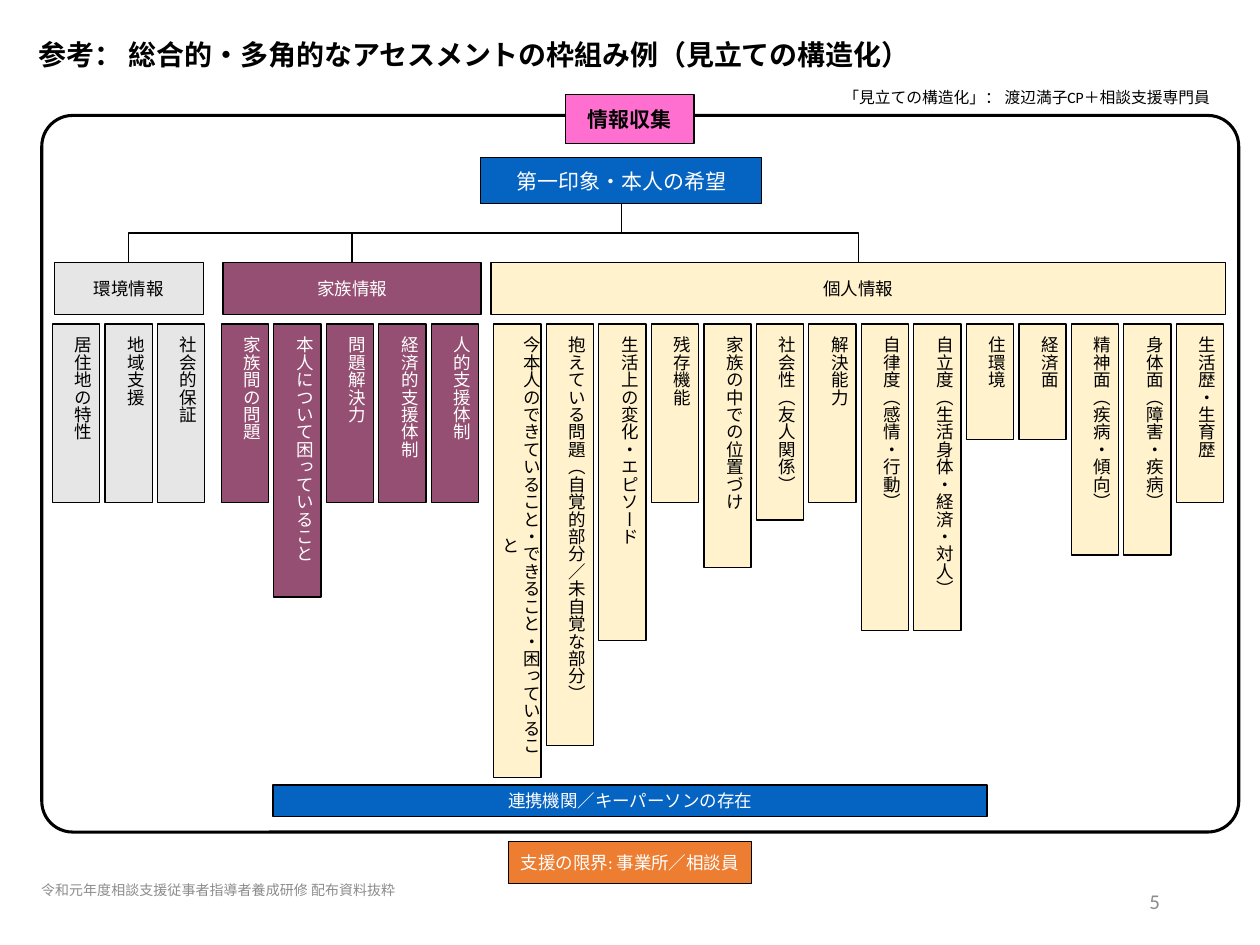
from lxml import etree
from pptx import Presentation
from pptx.dml.color import RGBColor
from pptx.enum import shapes, text
from pptx.oxml import ns
from pptx.util import Pt

BLACK, WHITE, GRAY = "000000", "FFFFFF", "8C8C8C"
BLUE, PLUM, CREAM, SILVER = "0563C1", "954F72", "FFF2CC", "E6E6E6"
CJK = "Noto Sans CJK JP"
ALIGN, ANCHOR = text.PP_ALIGN, text.MSO_ANCHOR


def write(sp, words, size, color, bold=False, align=ALIGN.CENTER,
          anchor=ANCHOR.MIDDLE, wrap=True, font="Calibri"):
    """Put one formatted paragraph into a shape."""
    tf = sp.text_frame
    tf.word_wrap = wrap
    tf.vertical_anchor = anchor
    p = tf.paragraphs[0]
    p.text = words
    p.alignment = align
    p.font.size = Pt(size)
    p.font.bold = bold
    p.font.color.rgb = RGBColor.from_string(color)
    p.font.name = font
    latin = p._p.find(".//" + ns.qn("a:latin"))
    ea = etree.Element(ns.qn("a:ea"), typeface=CJK)
    latin.addnext(ea)


def add_box(x, y, w, h, fill):
    sp = s.shapes.add_shape(shapes.MSO_SHAPE.RECTANGLE, Pt(x), Pt(y), Pt(w), Pt(h))
    sp.shadow.inherit = False
    sp.fill.solid()
    sp.fill.fore_color.rgb = RGBColor.from_string(fill)
    sp.line.color.rgb = RGBColor.from_string(BLACK)
    sp.line.width = Pt(0.75)
    return sp


prs = Presentation()
prs.slide_width, prs.slide_height = Pt(720), Pt(540)
s = prs.slides.add_slide(prs.slide_layouts[5])

# Title
title = s.shapes.title
title.left, title.top, title.width, title.height = Pt(15), Pt(14.4), Pt(660), Pt(36)
write(title, "参考： 総合的・多角的なアセスメントの枠組み例（見立ての構造化）",
      16, BLACK, bold=True, align=ALIGN.LEFT, font=CJK)
title.text_frame.paragraphs[0].line_spacing = 0.9

# Outer frame
frame = s.shapes.add_shape(shapes.MSO_SHAPE.ROUNDED_RECTANGLE,
                           Pt(23.9), Pt(66), Pt(684), Pt(409.5))
frame.adjustments[0] = 0.043
frame.shadow.inherit = False
frame.fill.background()
frame.line.color.rgb = RGBColor.from_string(BLACK)
frame.line.width = Pt(1.75)

# Text boxes: x, y, w, h, words, size, colour, align, anchor, font
for x, y, w, h, words, size, color, align, anchor, font in [
    (508, 500.4, 162, 28.8, "5", 12, GRAY, ALIGN.RIGHT, ANCHOR.MIDDLE, "Calibri"),
    (339, 46.8, 359.4, 18, "「見立ての構造化」： 渡辺満子CP＋相談支援専門員",
     9, BLACK, ALIGN.RIGHT, ANCHOR.TOP, "Calibri"),
    (12.2, 500.4, 225.4, 15.8, "令和元年度相談支援従事者指導者養成研修 配布資料抜粋",
     8, GRAY, ALIGN.CENTER, ANCHOR.MIDDLE, CJK),
]:
    tb = s.shapes.add_textbox(Pt(x), Pt(y), Pt(w), Pt(h))
    write(tb, words, size, color, align=align, anchor=anchor, font=font)

# Horizontal boxes outside the three groups
for x, y, w, h, words, size, fill, color, bold in [
    (323.1, 54, 73.6, 28, "情報収集", 12, "FF6FCF", BLACK, True),
    (290.4, 481, 139, 24, "支援の限界: 事業所／相談員", 10, "ED7D31", WHITE, False),
    (156, 448.6, 408, 18, "連携機関／キーパーソンの存在", 10, BLUE, WHITE, False),
]:
    write(add_box(x, y, w, h, fill), words, size, color, bold, wrap=False)

root = add_box(274.7, 90, 160.6, 26.4, BLUE)
write(root, "第一印象・本人の希望", 12, WHITE, wrap=False)

# Groups: heading, heading x and width, colours, first column x, (item, height)
groups = [
    ("環境情報", 31, 85.2, SILVER, BLACK, 30,
     [("居住地の特性", 102), ("地域支援", 102), ("社会的保証", 102)]),
    ("家族情報", 127.5, 147.4, PLUM, WHITE, 126.4,
     [("家族間の問題", 102), ("本人について困っていること", 156), ("問題解決力", 102),
      ("経済的支援体制", 102), ("人的支援体制", 102)]),
    ("個人情報", 280.6, 419.7, CREAM, BLACK, 282.2,
     [("今本人のできていること・できること・困っていること", 259),
      ("抱えている問題（自覚的部分／未自覚な部分）", 241),
      ("生活上の変化・エピソード", 181), ("残存機能", 102),
      ("家族の中での位置づけ", 139), ("社会性（友人関係）", 112), ("解決能力", 102),
      ("自律度（感情・行動）", 175), ("自立度（生活身体・経済・対人）", 175),
      ("住環境", 66), ("経済面", 66), ("精神面（疾病・傾向）", 132),
      ("身体面（障害・疾病）", 132), ("生活歴・生育歴", 102)]),
]
PITCH, COLUMN_W, COLUMN_Y = 30, 27, 185.2

for heading, head_x, head_w, fill, color, first_x, items in groups:
    head = add_box(head_x, 150, head_w, 29.6, fill)
    write(head, heading, 10, color, wrap=False)

    for i, (words, h) in enumerate(items):
        column = add_box(first_x + i * PITCH, COLUMN_Y, COLUMN_W, h, fill)
        # The longest item runs to two lines and sits against the left edge
        anchor = ANCHOR.BOTTOM if h == 259 else ANCHOR.TOP
        write(column, words, 10, color, anchor=anchor)
        column.text_frame._txBody.bodyPr.set("vert", "eaVert")

    # Elbow turned on its side so that it leaves downwards
    link = s.shapes.add_connector(shapes.MSO_CONNECTOR.ELBOW, 0, 0, 0, 0)
    link.begin_connect(root, 2)
    link.end_connect(head, 0)
    x1, x2 = root.left + root.width // 2, head.left + head.width // 2
    y1, y2 = root.top + root.height, head.top
    drop, run = y2 - y1, abs(x2 - x1)
    link.left, link.top = (x1 + x2 - drop) // 2, (y1 + y2 - run) // 2
    link.width, link.height = drop, run
    xfrm = link._element.spPr.find(ns.qn("a:xfrm"))
    for flip in ("flipH", "flipV"):
        xfrm.attrib.pop(flip, None)
    xfrm.set("rot", str((90 if x2 < x1 else 270) * 60000))
    if x2 > x1:
        xfrm.set("flipH", "1")
    link.line.color.rgb = RGBColor.from_string(BLACK)
    link.line.width = Pt(0.75)
    etree.SubElement(link._element.spPr, ns.qn("a:effectLst"))

prs.save("out.pptx")
